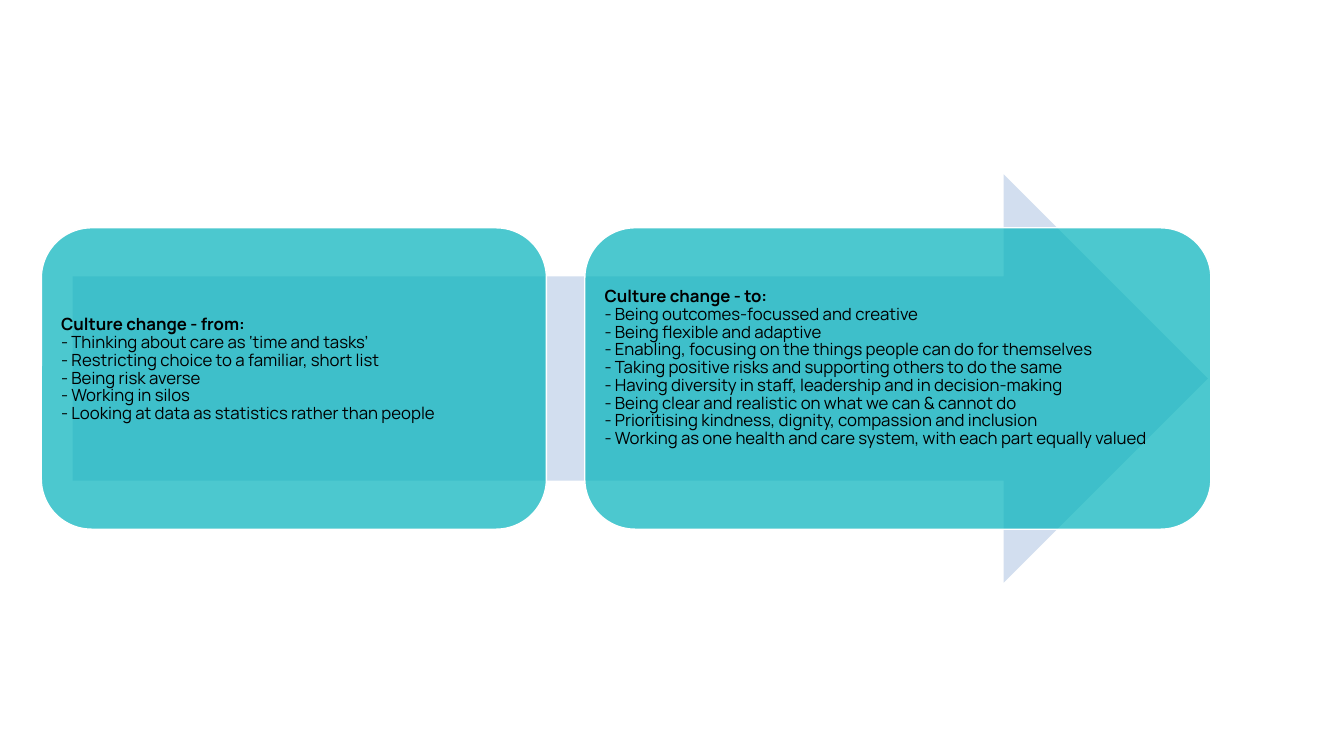
from lxml.etree import SubElement
from pptx import Presentation
from pptx.dml.color import RGBColor
from pptx.enum.shapes import MSO_SHAPE as SHAPE
from pptx.enum.text import MSO_ANCHOR as ANCHOR, PP_ALIGN as ALIGN
from pptx.oxml.ns import qn
from pptx.util import Inches, Pt

FONT = "Manrope"
TEAL = RGBColor(0x00, 0xB2, 0xBB)
PALE_BLUE = RGBColor(0xD2, 0xDE, 0xEF)
WHITE = RGBColor(0xFF, 0xFF, 0xFF)
BLACK = RGBColor(0x00, 0x00, 0x00)

SLIDE_W, SLIDE_H = 13.33, 7.5
PANEL_TOP, PANEL_H = 2.26, 2.99
INSET = 0.05

# left, width, room below the text, heading, points
PANELS = [
    (0.41, 5.01, 0.17, "Culture change - from:", [
        "Thinking about care as ‘time and tasks’",
        "Restricting choice to a familiar, short list",
        "Being risk averse",
        "Working in silos",
        "Looking at data as statistics rather than people",
    ]),
    (5.8, 6.21, 0.2, "Culture change - to:", [
        "Being outcomes-focussed and creative",
        "Being flexible and adaptive",
        "Enabling, focusing on the things people can do for themselves",
        "Taking positive risks and supporting others to do the same",
        "Having diversity in staff, leadership and in decision-making",
        "Being clear and realistic on what we can & cannot do",
        "Prioritising kindness, dignity, compassion and inclusion",
        "Working as one health and care system, with each part equally valued",
    ]),
]


def add_filled(slide, kind, box, color):
    sp = slide.shapes.add_shape(kind, *map(Inches, box))
    sp.shadow.inherit = False
    sp.fill.solid()
    sp.fill.fore_color.rgb = color
    return sp


def set_opacity(sp, percent):
    color = sp.fill._xPr.find(qn("a:solidFill"))[0]
    SubElement(color, qn("a:alpha")).set("val", str(percent * 1000))


def add_arrow(slide, box):
    sp = add_filled(slide, SHAPE.RIGHT_ARROW, box, PALE_BLUE)
    sp.line.fill.background()


def add_panel(slide, box, room_below, heading, points):
    sp = add_filled(slide, SHAPE.ROUNDED_RECTANGLE, box, TEAL)
    set_opacity(sp, 70)
    sp.line.color.rgb = WHITE
    sp.line.width = Pt(1)

    tf = sp.text_frame
    tf.word_wrap = True
    tf.vertical_anchor = ANCHOR.MIDDLE
    tf.margin_left = tf.margin_right = tf.margin_top = Inches(INSET)
    tf.margin_bottom = Inches(INSET + room_below)
    for i, text in enumerate([heading] + [f"- {point}" for point in points]):
        p = tf.add_paragraph() if i else tf.paragraphs[0]
        p.alignment = ALIGN.LEFT
        p.line_spacing = 0.88
        r = p.add_run()
        r.text = text
        r.font.name = FONT
        r.font.size = Pt(12)
        r.font.bold = i == 0
        r.font.color.rgb = BLACK


def build_culture_change(slide):
    add_arrow(slide, (0.72, 1.73, 11.26, 4.05))
    for left, width, room_below, heading, points in PANELS:
        box = (left, PANEL_TOP, width, PANEL_H)
        add_panel(slide, box, room_below, heading, points)


def main():
    prs = Presentation()
    prs.slide_width, prs.slide_height = Inches(SLIDE_W), Inches(SLIDE_H)
    build_culture_change(prs.slides.add_slide(prs.slide_layouts[6]))
    prs.save("out.pptx")


if __name__ == "__main__":
    main()
